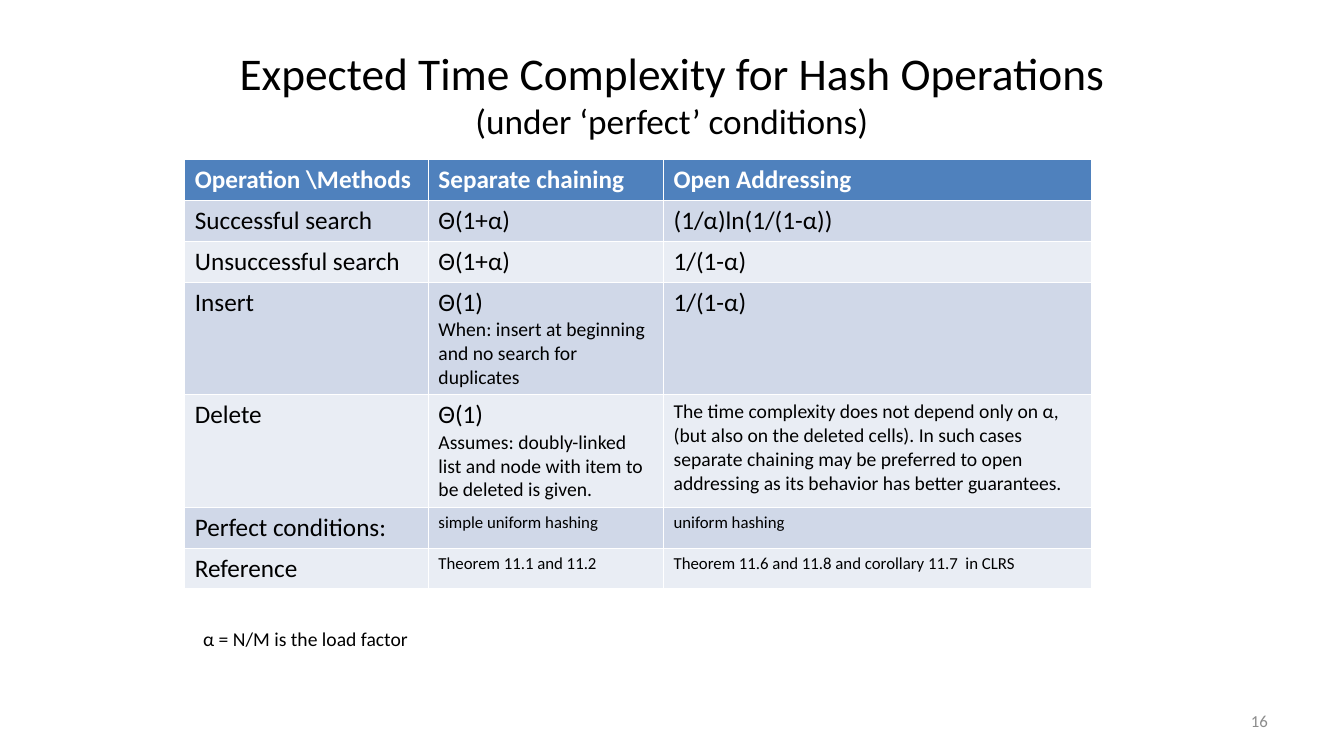
from pptx import Presentation
from pptx.dml.color import RGBColor
from pptx.enum.text import MSO_ANCHOR as Anchor, MSO_AUTO_SIZE as AutoSize, PP_ALIGN as Align
from pptx.util import Pt

PX = 9525  # 96 px to the inch
BLACK, WHITE, GREY = "000000", "FFFFFF", "8C8C8C"
HEADER_FILL, BAND_FILLS = "4F81BD", ("E9EDF4", "D0D8E8")


def color(value):
    return RGBColor.from_string(value)


def add_span(para, text, size, ink=BLACK, bold=False):
    span = para.add_run()
    span.text = text
    span.font.name = "Calibri"
    span.font.size = Pt(size)
    span.font.bold = bold
    span.font.color.rgb = color(ink)


deck = Presentation()
deck.slide_width, deck.slide_height = 1280 * PX, 720 * PX
page = deck.slides.add_slide(deck.slide_layouts[5])

# Title
title = page.shapes.title
title.left, title.top, title.width, title.height = [n * PX for n in (64, 29, 1152, 120)]
frame = title.text_frame
frame.auto_size = AutoSize.NONE
frame.vertical_anchor = Anchor.MIDDLE
para = frame.paragraphs[0]
para.alignment = Align.CENTER
add_span(para, "Expected Time Complexity for Hash Operations", 32.4)
para.add_line_break()
add_span(para, "(under ‘perfect’ conditions)", 25.2)

# Table: each cell is a list of (text, size) paragraphs
rows = [
    [[("Operation \\Methods", 18)], [("Separate chaining", 18)], [("Open Addressing", 18)]],
    [[("Successful search", 18)], [("Θ(1+α)", 18)], [("(1/α)ln(1/(1-α))", 18)]],
    [[("Unsuccessful search", 18)], [("Θ(1+α)", 18)], [("1/(1-α)", 18)]],
    [[("Insert", 18)],
     [("Θ(1)", 18), ("When: insert at beginning and no search for duplicates", 14)],
     [("1/(1-α)", 18)]],
    [[("Delete", 18)],
     [("Θ(1)", 18),
      ("Assumes: doubly-linked list and node with item to be deleted is given.", 14)],
     [("The time complexity does not depend only on α, (but also on the deleted cells). "
       "In such cases separate chaining may be preferred to open addressing "
       "as its behavior has better guarantees.", 14)]],
    [[("Perfect conditions:", 18)], [("simple uniform hashing", 12)], [("uniform hashing", 12)]],
    [[("Reference", 18)], [("Theorem 11.1 and 11.2", 12)],
     [("Theorem 11.6 and 11.8 and corollary 11.7  in CLRS", 12)]],
]
widths = (232, 224, 408)
row_height = 39
table = page.shapes.add_table(len(rows), len(widths), 176 * PX, 152 * PX,
                              sum(widths) * PX, len(rows) * row_height * PX).table
for column, width in zip(table.columns, widths):
    column.width = width * PX
for r, row in enumerate(rows):
    table.rows[r].height = row_height * PX
    header = r == 0
    for c, paragraphs in enumerate(row):
        cell = table.cell(r, c)
        cell.fill.solid()
        cell.fill.fore_color.rgb = color(HEADER_FILL if header else BAND_FILLS[r % 2])
        for i, (text, size) in enumerate(paragraphs):
            para = cell.text_frame.add_paragraph() if i else cell.text_frame.paragraphs[0]
            add_span(para, text, size, WHITE if header else BLACK, header)

# Slide number and load factor note
notes = [
    ("16", (918, 667, 299, 38), 12, GREY, Align.RIGHT, Anchor.MIDDLE),
    ("α = N/M is the load factor", (184, 592, 296, 33), 14, BLACK, Align.LEFT, Anchor.TOP),
]
for text, place, size, ink, align, anchor in notes:
    frame = page.shapes.add_textbox(*[n * PX for n in place]).text_frame
    frame.word_wrap = True
    frame.vertical_anchor = anchor
    frame.paragraphs[0].alignment = align
    add_span(frame.paragraphs[0], text, size, ink)

deck.save("out.pptx")
